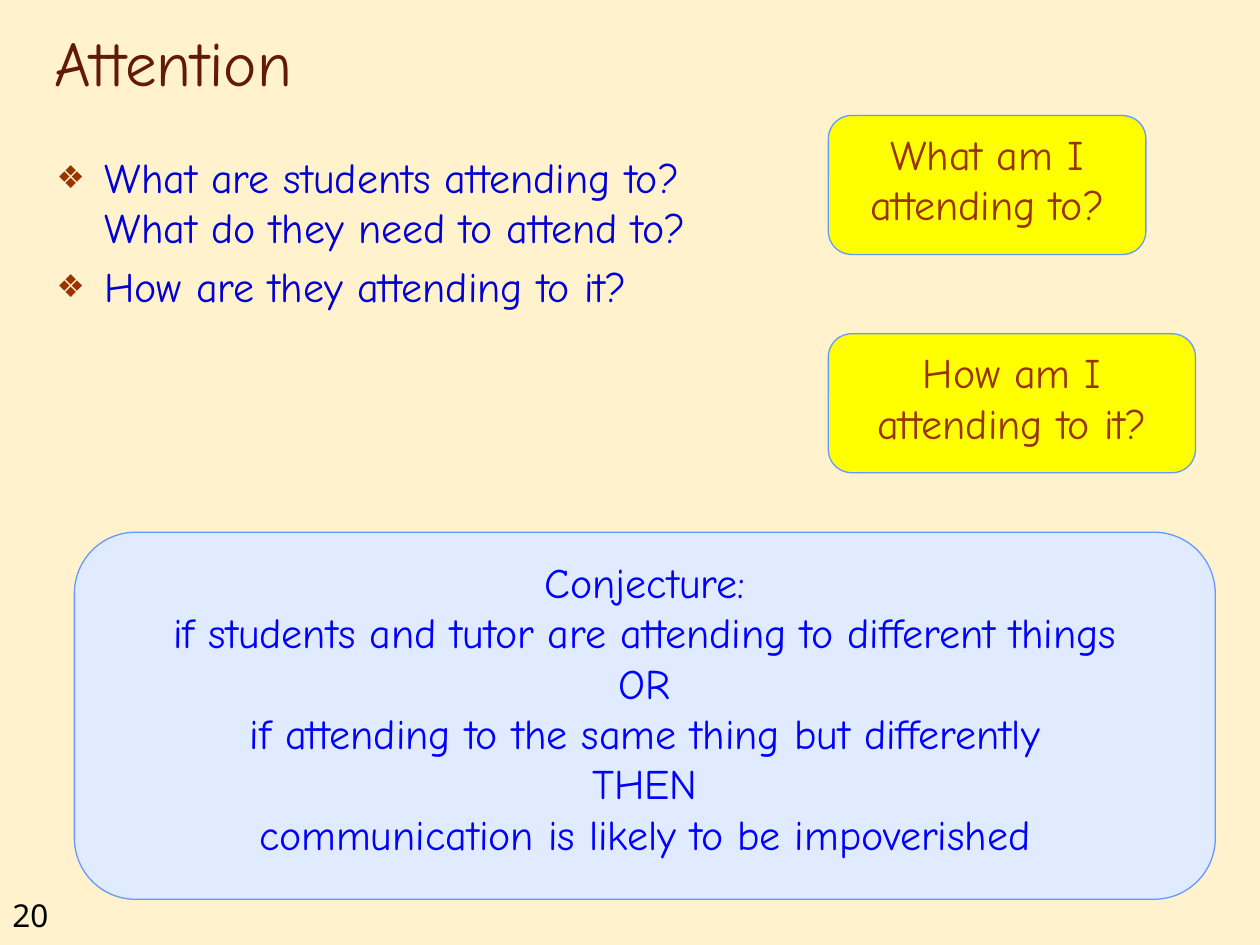
from lxml import etree
from pptx import Presentation
from pptx import util as u
from pptx.dml import color
from pptx.enum import shapes, text
from pptx.oxml import ns

COLOURS = {
    "background": "FFF2CC",
    "title": "631908",
    "body": "0000D4",
    "rust": "993300",
    "yellow": "FFFF00",
    "outline": "6699FF",
    "pale_blue": "E0EBFF",
    "blue": "0000FF",
    "black": "000000",
}
FONT = "Comic Neue"
PLAIN_FONT = "Noto Sans"


def rgb(name):
    return color.RGBColor.from_string(COLOURS[name])


def place(box, left, top, width, height):
    box.left, box.top = u.Cm(left), u.Cm(top)
    box.width, box.height = u.Cm(width), u.Cm(height)


def write(frame, paragraphs, size, colour, align, anchor=text.MSO_ANCHOR.TOP, font=FONT):
    frame.word_wrap = True
    frame.auto_size = text.MSO_AUTO_SIZE.NONE
    frame.vertical_anchor = anchor
    for index, lines in enumerate(paragraphs):
        para = frame.add_paragraph() if index else frame.paragraphs[0]
        para.alignment = align
        for number, line in enumerate(lines.split("\n")):
            if number:
                para.add_line_break()
            span = para.add_run()
            span.text = line
            span.font.name = font
            span.font.size = u.Pt(size)
            span.font.color.rgb = rgb(colour)


def add_bullet(para):
    props = para._p.get_or_add_pPr()
    props.set("marL", str(u.Cm(0.97)))
    props.set("indent", str(u.Cm(-0.97)))
    bullet_colour = etree.SubElement(props, ns.qn("a:buClr"))
    etree.SubElement(bullet_colour, ns.qn("a:srgbClr"), val=COLOURS["rust"])
    etree.SubElement(props, ns.qn("a:buSzPct"), val="75000")
    etree.SubElement(props, ns.qn("a:buFont"), typeface=PLAIN_FONT)
    etree.SubElement(props, ns.qn("a:buChar"), char="❖")


def add_title(page, words):
    title = page.shapes.title
    place(title, 0.84, 0.43, 21.59, 1.7)
    write(title.text_frame, [words], 36, "title", text.PP_ALIGN.LEFT, text.MSO_ANCHOR.BOTTOM)


def add_text(page, bounds, paragraphs, size, colour, font=FONT):
    box = page.shapes.add_textbox(*map(u.Cm, bounds))
    write(box.text_frame, paragraphs, size, colour, text.PP_ALIGN.LEFT, font=font)
    return box


def add_questions(page, bounds, questions):
    box = add_text(page, bounds, questions, 24, "body")
    for index, para in enumerate(box.text_frame.paragraphs):
        if index:
            para.space_before = u.Pt(5)
        add_bullet(para)


def add_panel(page, bounds, paragraphs, fill, colour):
    panel = page.shapes.add_shape(shapes.MSO_SHAPE.ROUNDED_RECTANGLE, *map(u.Cm, bounds))
    panel.shadow.inherit = False
    panel.fill.solid()
    panel.fill.fore_color.rgb = rgb(fill)
    panel.line.color.rgb = rgb("outline")
    panel.line.width = u.Pt(0.75)
    write(panel.text_frame, paragraphs, 24, colour, text.PP_ALIGN.CENTER)


def main():
    deck = Presentation()
    deck.slide_width, deck.slide_height = u.Cm(25.4), u.Cm(19.05)
    page = deck.slides.add_slide(deck.slide_layouts[5])
    page.background.fill.solid()
    page.background.fill.fore_color.rgb = rgb("background")

    add_text(page, (0, 17.93, 1.9, 1.02), ["20"], 18, "black", PLAIN_FONT)
    add_title(page, "Attention")
    add_questions(page, (0.89, 2.92, 23.39, 3.99), [
        "What are students attending to?\nWhat do they need to attend to?",
        "How are they attending to it?",
    ])
    for top, width, question in (
        (2.33, 6.4, "What am I attending to?"),
        (6.73, 7.4, "How am I attending to it?"),
    ):
        add_panel(page, (16.7, top, width, 2.8), [question], "yellow", "rust")
    add_panel(page, (1.5, 10.73, 23, 7.4), [
        "Conjecture:",
        "if students and tutor are attending to different things",
        "OR",
        "if attending to the same thing but differently\nTHEN\n"
        "communication is likely to be impoverished",
    ], "pale_blue", "blue")
    deck.save("out.pptx")


if __name__ == "__main__":
    main()
